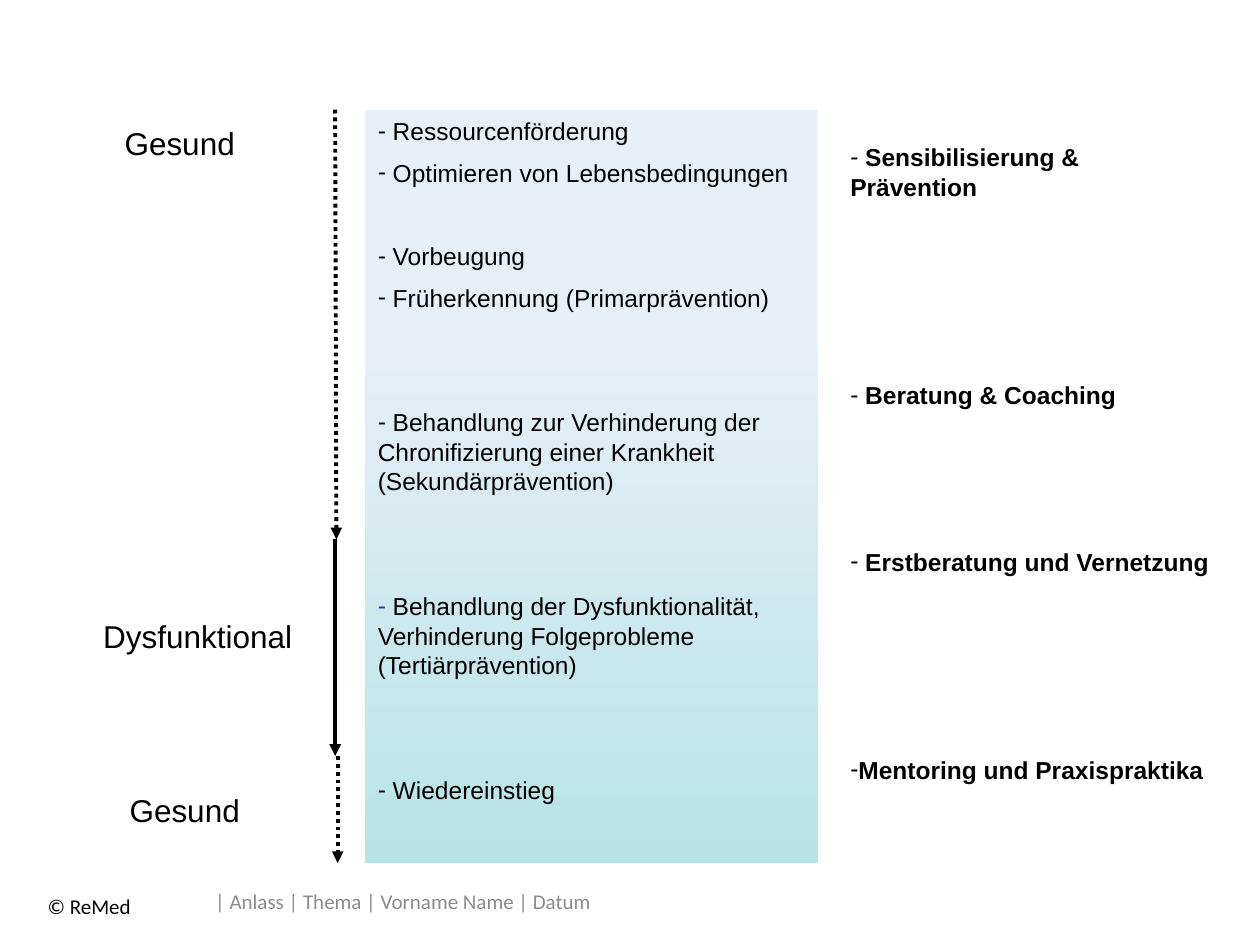
from lxml.etree import SubElement
from pptx import Presentation
from pptx.dml.color import RGBColor
from pptx.enum.dml import MSO_LINE_DASH_STYLE as Dash
from pptx.enum.shapes import MSO_CONNECTOR as Connector, MSO_SHAPE as Shape
from pptx.enum.text import MSO_ANCHOR as Anchor, PP_ALIGN as Align
from pptx.oxml.ns import qn
from pptx.util import Inches, Pt

BLACK = "000000"
LINE_STEP = 23.8  # one 14 pt line plus its space before
SPACE_BEFORE = 7


def color(value):
    return RGBColor.from_string(value)


def write(frame, items, size, font="Arial", ink=BLACK, bold=False, bullet=False):
    """Fill a frame with (text, skipped lines, bullet colour) items."""
    frame.word_wrap = True
    for index, (text, skipped, dash_ink) in enumerate(items):
        para = frame.paragraphs[0] if index == 0 else frame.add_paragraph()
        para.text = text
        para.alignment = Align.LEFT
        if index:
            para.space_before = Pt(round(SPACE_BEFORE + skipped * LINE_STEP, 1))
        if bullet:
            props = para._p.get_or_add_pPr()
            props.set("marL", "0")
            props.set("indent", "0")
            dash_color = SubElement(props, qn("a:buClr"))
            SubElement(dash_color, qn("a:srgbClr"), val=dash_ink)
            SubElement(props, qn("a:buFont"), typeface="Arial")
            SubElement(props, qn("a:buChar"), char="-")
        for span in para.runs:
            span.font.name = font
            span.font.size = Pt(size)
            span.font.bold = bold
            span.font.color.rgb = color(ink)


deck = Presentation()
deck.slide_width, deck.slide_height = Inches(10), Inches(7.5)
page = deck.slides.add_slide(deck.slide_layouts[6])

# State labels and footer
labels = [
    ("Gesund", 0.89, 0.93, 1.25, 0.41, 18, "Arial", BLACK),
    ("Dysfunktional", 0.72, 4.84, 1.95, 0.41, 18, "Arial", BLACK),
    ("Gesund", 0.93, 6.22, 1.25, 0.41, 18, "Arial", BLACK),
    ("| Anlass | Thema | Vorname Name | Datum", 1.61, 6.95, 4.97, 0.4, 12, "Calibri", "8C8C8C"),
    ("© ReMed", 0.28, 7.04, 1.34, 0.3, 12, "Calibri", BLACK),
]
for text, left, top, width, height, size, font, ink in labels:
    box = page.shapes.add_textbox(Inches(left), Inches(top), Inches(width), Inches(height))
    box.text_frame.vertical_anchor = Anchor.MIDDLE
    write(box.text_frame, [(text, 0, BLACK)], size, font, ink)

# Timeline arrows
arrows = [
    (2.66, 0.87, 2.67, 4.28, Dash.ROUND_DOT),
    (2.66, 4.28, 2.66, 6, Dash.SOLID),
    (2.68, 6, 2.68, 6.85, Dash.ROUND_DOT),
]
for x1, y1, x2, y2, dash in arrows:
    arrow = page.shapes.add_connector(
        Connector.STRAIGHT, Inches(x1), Inches(y1), Inches(x2), Inches(y2))
    arrow.line.color.rgb = color(BLACK)
    arrow.line.width = Pt(2.25)
    arrow.line.dash_style = dash
    SubElement(arrow.line._get_or_add_ln(), qn("a:tailEnd"), type="triangle")
    SubElement(arrow._element.spPr, qn("a:effectLst"))

# Gradient panel with the measures
panel = page.shapes.add_shape(
    Shape.RECTANGLE, Inches(2.9), Inches(0.87), Inches(3.59), Inches(5.98))
panel.shadow.inherit = False
panel.line.fill.background()
panel.fill.gradient()
panel.fill.gradient_angle = 270
for stop, position, shade in zip(panel.fill.gradient_stops, (0.29, 1), ("E7F0F6", "B8E3E6")):
    stop.position = position
    stop.color.rgb = color(shade)
panel.text_frame.vertical_anchor = Anchor.TOP
measures = [
    (" Ressourcenförderung", 0, BLACK),
    (" Optimieren von Lebensbedingungen", 0, BLACK),
    (" Vorbeugung", 1, BLACK),
    (" Früherkennung (Primarprävention)", 0, BLACK),
    (" Behandlung zur Verhinderung der Chronifizierung einer Krankheit "
     "(Sekundärprävention)", 2, BLACK),
    (" Behandlung der Dysfunktionalität, Verhinderung Folgeprobleme "
     "(Tertiärprävention)", 2, "333399"),
    (" Wiedereinstieg", 2, BLACK),
]
write(panel.text_frame, measures, 14, bullet=True)

# Services on the right
services = [
    (" Sensibilisierung & Prävention", 0, BLACK),
    (" Beratung & Coaching", 4, BLACK),
    (" Erstberatung und Vernetzung", 3, BLACK),
    ("Mentoring und Praxispraktika", 4, BLACK),
]
box = page.shapes.add_textbox(Inches(6.65), Inches(1.08), Inches(3.07), Inches(5.66))
write(box.text_frame, services, 14, bold=True, bullet=True)

deck.save("out.pptx")
